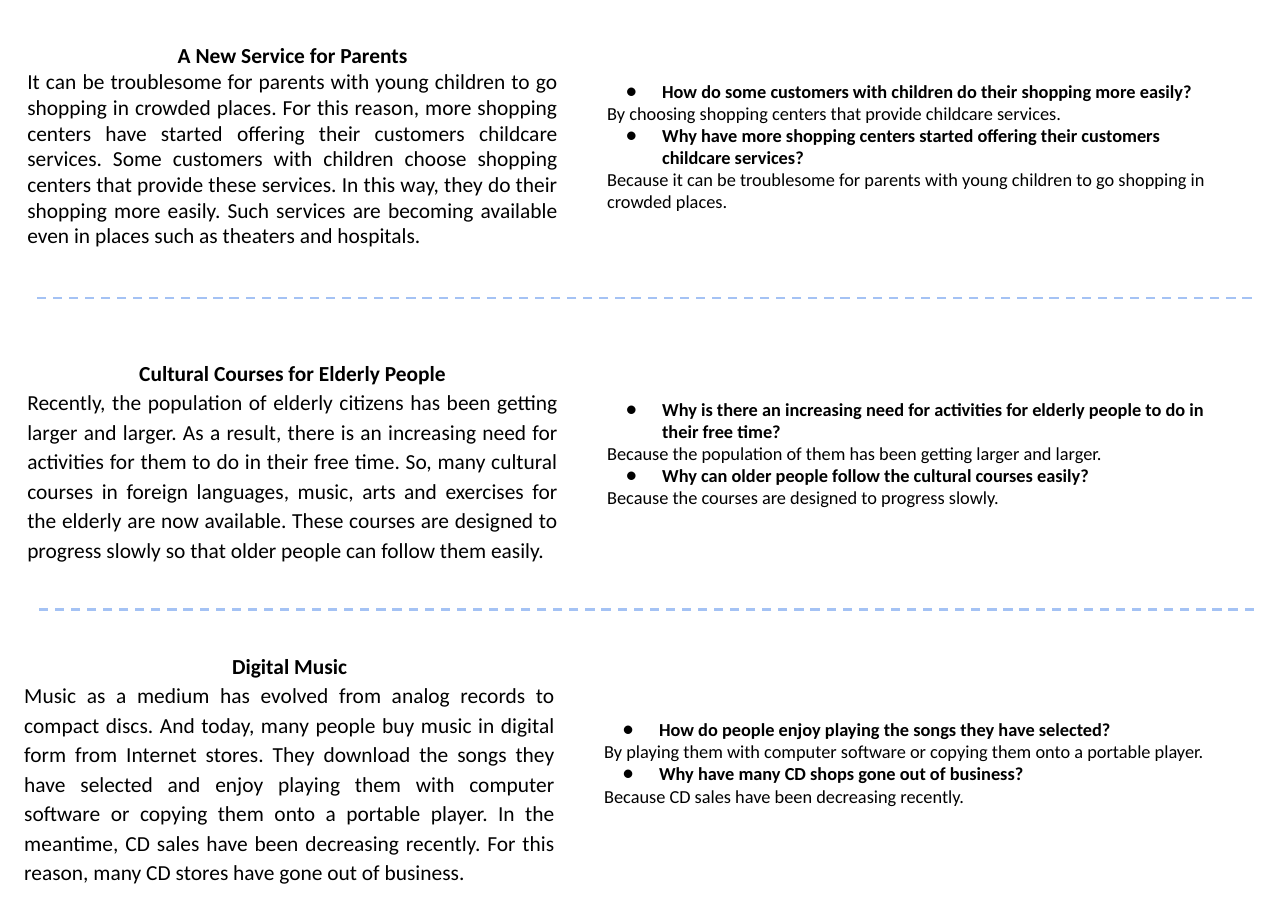
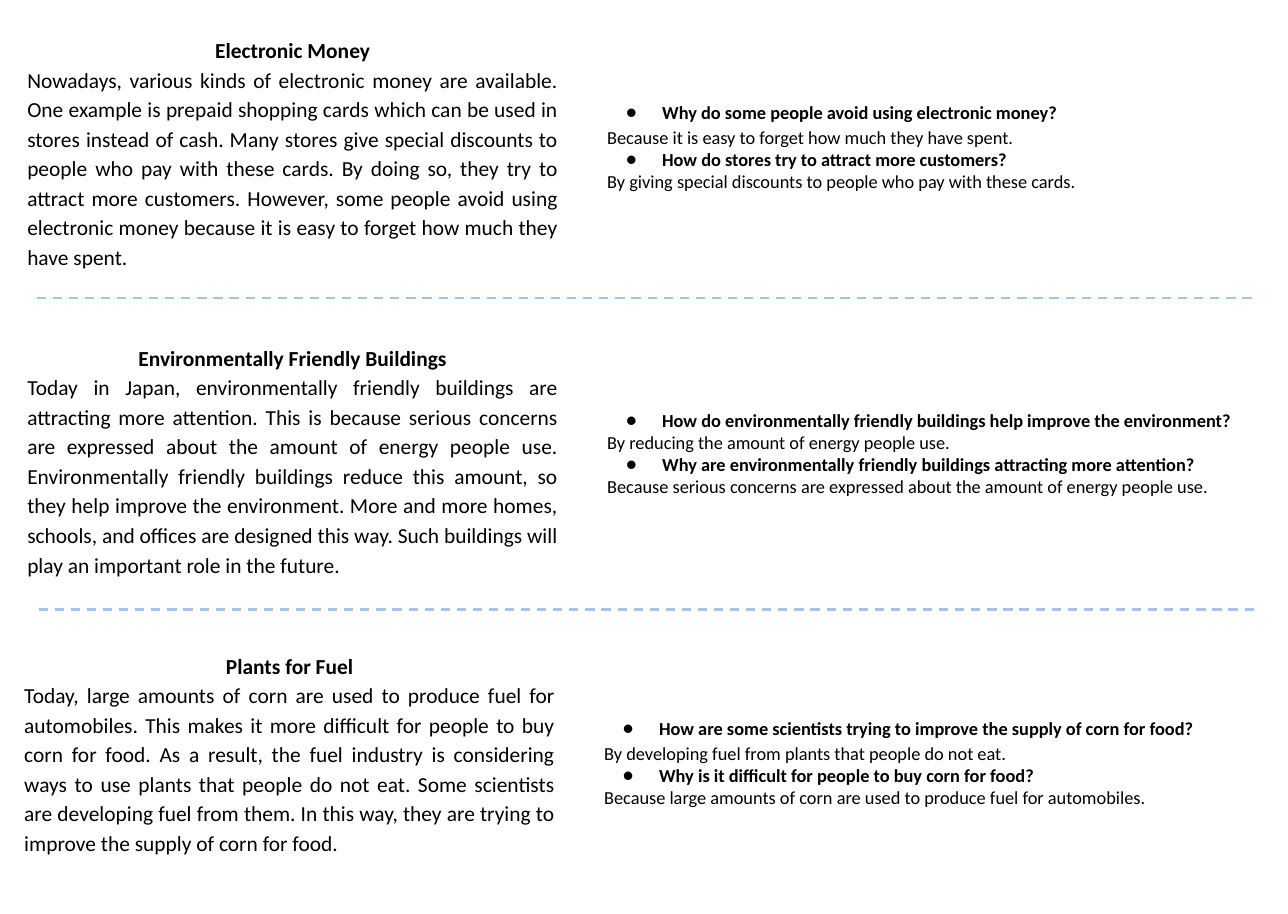
from lxml import etree
from pptx import Presentation
from pptx.dml.color import RGBColor
from pptx.enum.dml import MSO_LINE
from pptx.enum.shapes import MSO_CONNECTOR, MSO_SHAPE
from pptx.enum.text import MSO_ANCHOR, MSO_AUTO_SIZE, PP_ALIGN
from pptx.oxml.ns import qn
from pptx.util import Cm, Pt

RECT, LINE, DASH = MSO_SHAPE.RECTANGLE, MSO_CONNECTOR.STRAIGHT, MSO_LINE.DASH
TOP, MIDDLE, GROW = MSO_ANCHOR.TOP, MSO_ANCHOR.MIDDLE, MSO_AUTO_SIZE.SHAPE_TO_FIT_TEXT
LEFT, CENTER, JUSTIFY = PP_ALIGN.LEFT, PP_ALIGN.CENTER, PP_ALIGN.JUSTIFY
COLORS = {"text": "000000", "card": "FFFFFF", "rule": "A4C2F4"}
FONT = "Calibri"

# Rows in cm: story left, card left, card width, card middle
ROWS = [(0.38, 13.76, 14.78, 3.38), (0.38, 13.76, 15.11, 10.46), (0.31, 13.69, 14.78, 17.59)]
# Dashed rules in cm: right end, left end, height on the page
RULES = [(28.88, 0.74, 6.88), (28.93, 0.79, 14.06)]

# Each topic: title, story, question and answer pairs, sizes in cm, line spacing
PAGES = [
    [
        dict(title="A New Service for Parents",
             story="It can be troublesome for parents with young children to go shopping in "
                   "crowded places. For this reason, more shopping centers have started offering "
                   "their customers childcare services. Some customers with children choose "
                   "shopping centers that provide these services. In this way, they do their "
                   "shopping more easily. Such services are becoming available even in places "
                   "such as theaters and hospitals. ",
             pairs=[("How do some customers with children do their shopping more easily?",
                     "By choosing shopping centers that provide childcare services."),
                    ("Why have more shopping centers started offering their customers "
                     "childcare services?",
                     "Because it can be troublesome for parents with young children to go "
                     "shopping in crowded places.")],
             top=0.73, high=5.31, card=3.5, gaps=(1, 1), first=1),
        dict(title="Cultural Courses for Elderly People",
             story="Recently, the population of elderly citizens has been getting larger and "
                   "larger. As a result, there is an increasing need for activities for them to "
                   "do in their free time. So, many cultural courses in foreign languages, music, "
                   "arts and exercises for the elderly are now available. These courses are "
                   "designed to progress slowly so that older people can follow them easily. ",
             pairs=[("Why is there an increasing need for activities for elderly people to do in "
                     "their free time?",
                     "Because the population of them has been getting larger and larger."),
                    ("Why can older people follow the cultural courses easily?",
                     "Because the courses are designed to progress slowly.")],
             top=7.75, high=5.46, card=3.07, gaps=(1.5, 1.15), first=1),
        dict(title="Digital Music",
             story="Music as a medium has evolved from analog records to compact discs. And "
                   "today, many people buy music in digital form from Internet stores. They "
                   "download the songs they have selected and enjoy playing them with computer "
                   "software or copying them onto a portable player. In the meantime, CD sales "
                   "have been decreasing recently. For this reason, many CD stores have gone out "
                   "of business. ",
             pairs=[("How do people enjoy playing the songs they have selected?",
                     "By playing them with computer software or copying them onto a portable "
                     "player."),
                    ("Why have many CD shops gone out of business?",
                     "Because CD sales have been decreasing recently.")],
             top=14.51, high=6.15, card=2.57, gaps=(1.5, 1.15), first=1),
    ],
    [
        dict(title="Electronic Money",
             story="Nowadays, various kinds of electronic money are available. One example is "
                   "prepaid shopping cards which can be used in stores instead of cash. Many "
                   "stores give special discounts to people who pay with these cards. By doing "
                   "so, they try to attract more customers. However, some people avoid using "
                   "electronic money because it is easy to forget how much they have spent. ",
             pairs=[("Why do some people avoid using electronic money?",
                     "Because it is easy to forget how much they have spent."),
                    ("How do stores try to attract more customers?",
                     "By giving special discounts to people who pay with these cards.")],
             top=0.31, high=6.15, card=3.5, gaps=(1.5, 1.15), first=1.15),
        dict(title="Environmentally Friendly Buildings",
             story="Today in Japan, environmentally friendly buildings are attracting more "
                   "attention. This is because serious concerns are expressed about the amount "
                   "of energy people use. Environmentally friendly buildings reduce this amount, "
                   "so they help improve the environment. More and more homes, schools, and "
                   "offices are designed this way. Such buildings will play an important role in "
                   "the future.",
             pairs=[("How do environmentally friendly buildings help improve the environment?",
                     "By reducing the amount of energy people use."),
                    ("Why are environmentally friendly buildings attracting more attention?",
                     "Because serious concerns are expressed about the amount of energy people "
                     "use.")],
             top=7.41, high=6.15, card=2.57, gaps=(1.5, 1.15), first=1),
        dict(title="Plants for Fuel",
             story="Today, large amounts of corn are used to produce fuel for automobiles. This "
                   "makes it more difficult for people to buy corn for food. As a result, the "
                   "fuel industry is considering ways to use plants that people do not eat. Some "
                   "scientists are developing fuel from them. In this way, they are trying to "
                   "improve the supply of corn for food.",
             pairs=[("How are some scientists trying to improve the supply of corn for food?",
                     "By developing fuel from plants that people do not eat."),
                    ("Why is it difficult for people to buy corn for food?",
                     "Because large amounts of corn are used to produce fuel for automobiles.")],
             top=14.51, high=5.46, card=2.64, gaps=(1.5, 1.15), first=1.15),
    ],
]


def write(box, anchor, size, lines):
    """Fill a box with lines of (text, bold, alignment, spacing)."""
    frame = box.text_frame
    frame.word_wrap = True
    frame.vertical_anchor = anchor
    frame.margin_left = frame.margin_right = Cm(0.25)
    frame.margin_top = frame.margin_bottom = Cm(0.25)
    frame.text = "\n".join(line[0] for line in lines)
    for para, (_, bold, align, gap) in zip(frame.paragraphs, lines):
        para.alignment = align
        para.line_spacing = float(gap)
        font = para.runs[0].font
        font.name, font.size, font.bold = FONT, Pt(size), bold
        font.color.rgb = RGBColor.from_string(COLORS["text"])


def bullet(para):
    """Give a paragraph a hanging round bullet."""
    props = para._p.get_or_add_pPr()
    props.set("marL", str(Cm(1.27)))
    props.set("indent", str(Cm(-0.84)))
    color = etree.SubElement(props, qn("a:buClr"))
    etree.SubElement(color, qn("a:srgbClr"), val=COLORS["text"])
    etree.SubElement(props, qn("a:buFont"), typeface=FONT)
    etree.SubElement(props, qn("a:buChar"), char="●")


deck = Presentation()
deck.slide_width, deck.slide_height = Cm(29.72), Cm(21.08)

for page in PAGES:
    slide = deck.slides.add_slide(deck.slide_layouts[6])

    # Dashed rules between the rows
    for start, end, y in RULES:
        rule = slide.shapes.add_connector(LINE, Cm(start), Cm(y), Cm(end), Cm(y))
        rule.line.color.rgb = RGBColor.from_string(COLORS["rule"])
        rule.line.width = Pt(1.5)
        rule.line.dash_style = DASH
        etree.SubElement(rule._element.spPr, qn("a:effectLst"))

    for topic, (left, side, wide, mid) in zip(page, ROWS):
        group = slide.shapes.add_group_shape()

        # Question card on the right
        high = topic["card"]
        card = group.shapes.add_shape(RECT, Cm(side), Cm(mid - high / 2), Cm(wide), Cm(high))
        card.shadow.inherit = False
        card.fill.solid()
        card.fill.fore_color.rgb = RGBColor.from_string(COLORS["card"])
        card.line.fill.background()
        lines = []
        for i, (ask, reply) in enumerate(topic["pairs"]):
            lines += [(ask, True, LEFT, 1),
                      (reply, False, LEFT, topic["first"] if i == 0 else 1)]
        write(card, MIDDLE, 12, lines)
        for para in card.text_frame.paragraphs[::2]:
            bullet(para)

        # Story on the left
        story = group.shapes.add_textbox(Cm(left), Cm(topic["top"]), Cm(12.75), Cm(topic["high"]))
        head, body = topic["gaps"]
        write(story, TOP, 14, [(topic["title"], True, CENTER, head),
                               (topic["story"], False, JUSTIFY, body)])
        story.text_frame.auto_size = GROW

deck.save("out.pptx")
